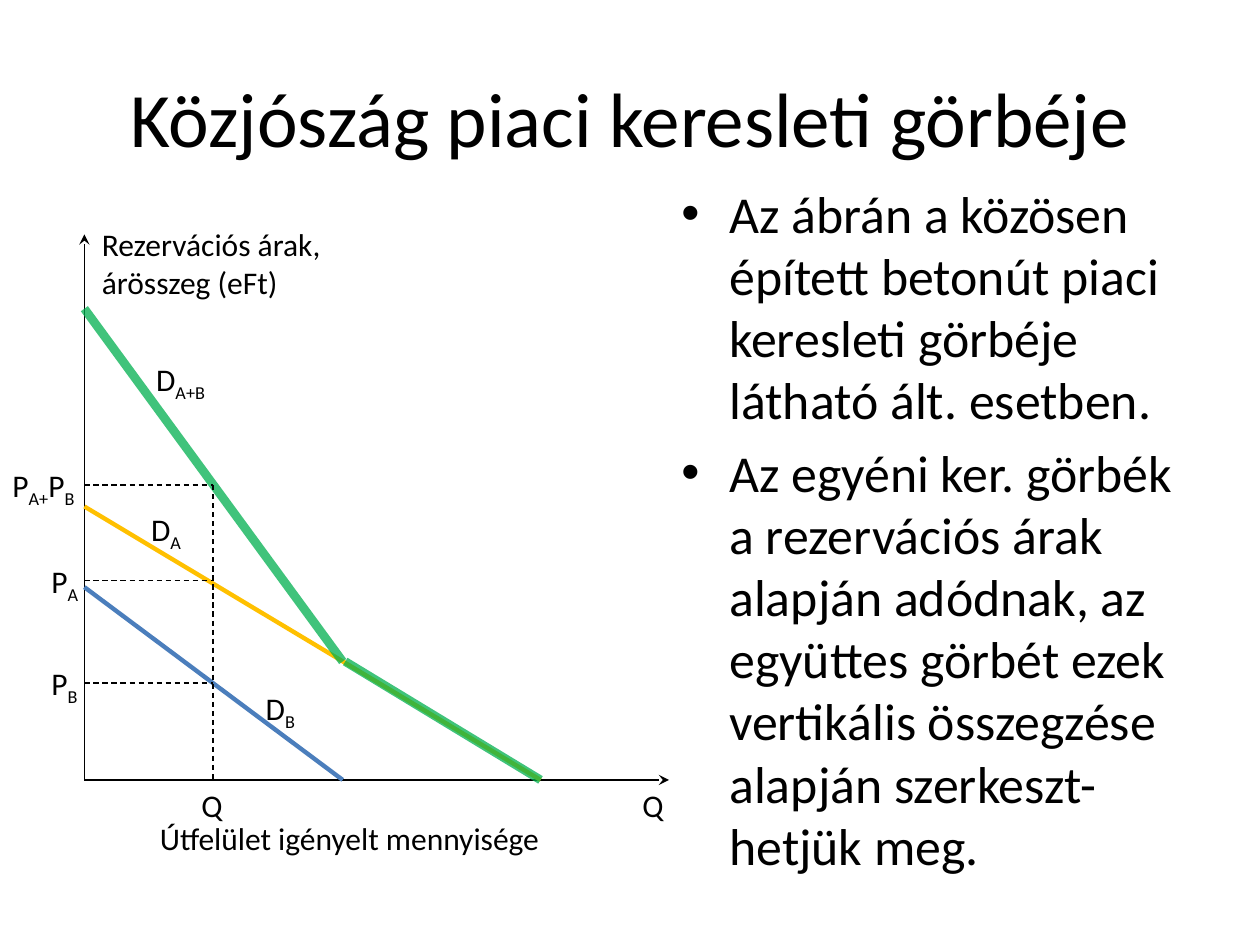
from dataclasses import dataclass
from typing import Optional

import pptx
import pptx.dml.color
import pptx.enum.dml
import pptx.enum.shapes
import pptx.enum.text
import pptx.oxml
import pptx.oxml.ns
import pptx.util

FONT = "Calibri"
BLACK, BLUE, YELLOW, GREEN = "000000", "4B7EBC", "FFC000", "00B050"
AXIS_X, AXIS_Y = 0.67, 6.19
QUANTITY_X = 1.69
PRICE_SUM_Y, PRICE_A_Y, PRICE_B_Y = 3.85, 4.61, 5.42


@dataclass
class Line:
    start: tuple[float, float]
    end: tuple[float, float]
    color: str = BLACK
    width: float = 0.75
    dashed: bool = False
    arrow: bool = False
    opacity: Optional[int] = None


@dataclass
class Label:
    """Text pieces alternate between normal text and subscript."""
    pieces: tuple[str, ...]
    left: float
    top: float
    width: float = 0.71
    height: float = 0.4


LINES = [
    Line((AXIS_X, AXIS_Y), (AXIS_X, 1.86), arrow=True),
    Line((AXIS_X, AXIS_Y), (5.31, AXIS_Y), arrow=True),
    Line((AXIS_X, 4.66), (2.72, AXIS_Y), BLUE, 2.5),
    Line((AXIS_X, 4.02), (4.29, AXIS_Y), YELLOW, 2.5),
    Line((AXIS_X, 2.45), (2.72, 5.25), GREEN, 5, opacity=75),
    Line((2.74, 5.25), (4.29, AXIS_Y), GREEN, 5, opacity=75),
    Line((QUANTITY_X, PRICE_SUM_Y), (QUANTITY_X, AXIS_Y), dashed=True),
] + [
    Line((AXIS_X, price_y), (QUANTITY_X, price_y), dashed=True)
    for price_y in (PRICE_B_Y, PRICE_A_Y, PRICE_SUM_Y)
]

LABELS = [
    Label(("P", "A"), 0.31, PRICE_A_Y - 0.2),
    Label(("P", "B"), 0.31, PRICE_B_Y - 0.2),
    Label(("P", "A+", "P", "B"), 0, PRICE_SUM_Y - 0.2, 0.87),
    Label(("D", "A"), 1.1, 4),
    Label(("D", "B"), 2.01, 5.42),
    Label(("D", "A+B"), 1.14, 2.81),
    Label(("Q",), 5, AXIS_Y, 0.79),
    Label(("Q",), 1.5, AXIS_Y, 0.79),
    Label(("Rezervációs árak, árösszeg (eFt)",), 0.71, 1.74, 2.28, 0.71),
    Label(("Útfelület igényelt mennyisége",), 1.17, 6.45, 3.99),
]

BULLETS = [
    "Az ábrán a közösen épített betonút piaci keresleti görbéje látható ált. esetben.",
    "Az egyéni ker. görbék a rezervációs árak alapján adódnak, az együttes görbét ezek "
    "vertikális összegzése alapján szerkeszt-hetjük meg.",
]


def rgb(color: str) -> pptx.dml.color.RGBColor:
    return pptx.dml.color.RGBColor.from_string(color)


def inches(*values: float) -> list[pptx.util.Length]:
    return [pptx.util.Inches(value) for value in values]


def add_child(parent, tag: str, **attributes: str) -> None:
    child = pptx.oxml.parse_xml(f"<a:{tag} {pptx.oxml.ns.nsdecls('a')}/>")
    for name, value in attributes.items():
        child.set(name, value)
    parent.append(child)


def format_font(font, size: float) -> None:
    font.name = FONT
    font.size = pptx.util.Pt(size)
    font.color.rgb = rgb(BLACK)


def add_text_frame(slide, left: float, top: float, width: float, height: float):
    box = slide.shapes.add_textbox(*inches(left, top, width, height))
    box.text_frame.word_wrap = True
    return box.text_frame


def draw_line(slide, line: Line) -> None:
    connector = slide.shapes.add_connector(
        pptx.enum.shapes.MSO_CONNECTOR.STRAIGHT, *inches(*line.start, *line.end))
    connector.line.color.rgb = rgb(line.color)
    connector.line.width = pptx.util.Pt(line.width)
    if line.dashed:
        connector.line.dash_style = pptx.enum.dml.MSO_LINE.DASH
    shape_properties = connector._element.spPr
    outline = shape_properties.find(pptx.oxml.ns.qn("a:ln"))
    if line.opacity is not None:
        color = outline.find(".//" + pptx.oxml.ns.qn("a:srgbClr"))
        add_child(color, "alpha", val=str(line.opacity * 1000))
    if line.arrow:
        add_child(outline, "tailEnd", type="stealth")
    add_child(shape_properties, "effectLst")


def draw_label(slide, label: Label) -> None:
    frame = add_text_frame(slide, label.left, label.top, label.width, label.height)
    frame.auto_size = pptx.enum.text.MSO_AUTO_SIZE.SHAPE_TO_FIT_TEXT
    for index, piece in enumerate(label.pieces):
        run = frame.paragraphs[0].add_run()
        run.text = piece
        format_font(run.font, 18)
        if index % 2:
            run._r.get_or_add_rPr().set("baseline", "-25000")


def draw_title(slide, text: str) -> None:
    title = slide.shapes.title
    title.left, title.top, title.width, title.height = inches(0.5, 0.3, 9, 1.25)
    title.text_frame.text = text
    title.text_frame.vertical_anchor = pptx.enum.text.MSO_ANCHOR.MIDDLE
    paragraph = title.text_frame.paragraphs[0]
    paragraph.alignment = pptx.enum.text.PP_ALIGN.CENTER
    format_font(paragraph.runs[0].font, 44)


def draw_bullets(slide, bullets: list[str]) -> None:
    frame = add_text_frame(slide, 5.31, 1.39, 4.25, 5.74)
    frame.text = "\n".join(bullets)
    indent = pptx.util.Inches(0.38)
    for paragraph in frame.paragraphs:
        paragraph.space_before = pptx.util.Pt(6)
        format_font(paragraph.runs[0].font, 29.6)
        properties = paragraph._p.get_or_add_pPr()
        properties.set("marL", str(indent))
        properties.set("indent", str(-indent))
        add_child(properties, "buFont", typeface="Arial")
        add_child(properties, "buChar", char="•")


def main() -> None:
    presentation = pptx.Presentation()
    presentation.slide_width, presentation.slide_height = inches(10, 7.5)
    slide = presentation.slides.add_slide(presentation.slide_layouts.get_by_name("Title Only"))
    draw_title(slide, "Közjószág piaci keresleti görbéje")
    draw_bullets(slide, BULLETS)
    for line in LINES:
        draw_line(slide, line)
    for label in LABELS:
        draw_label(slide, label)
    presentation.save("out.pptx")


if __name__ == "__main__":
    main()
